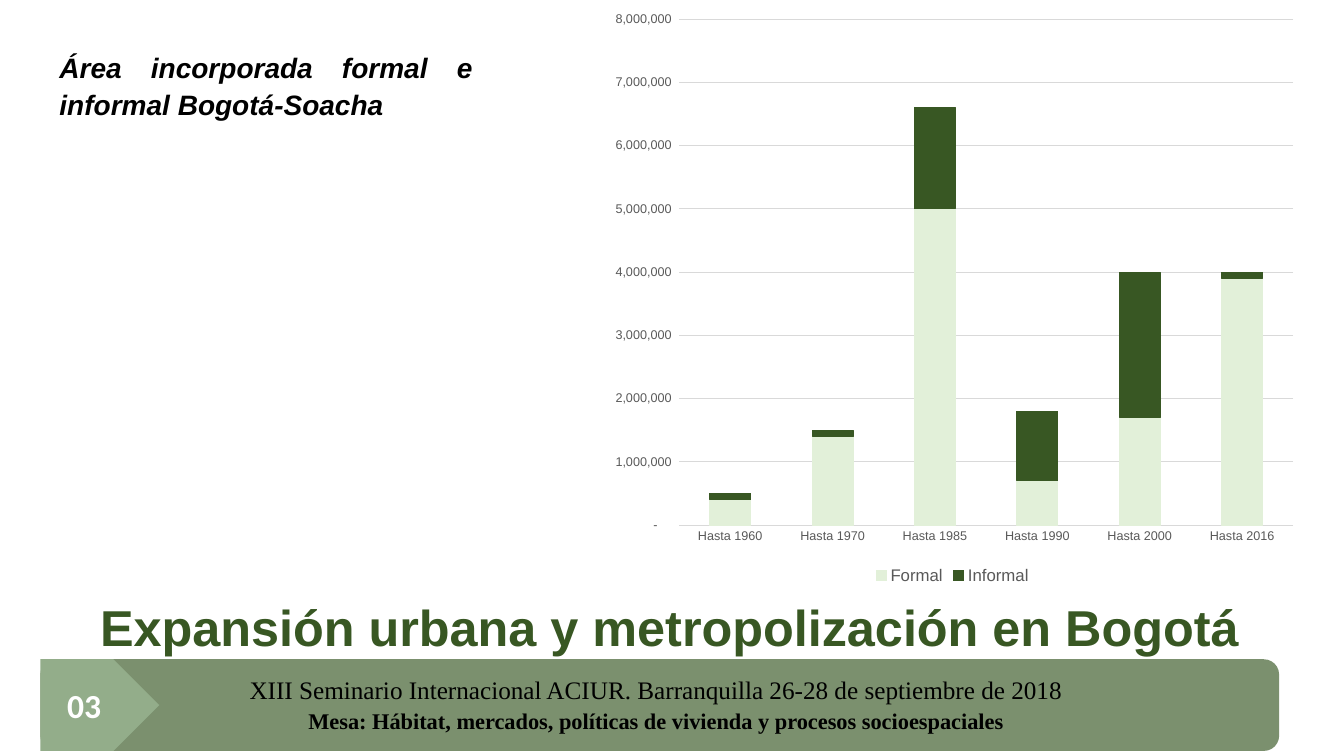
from pptx import Presentation
from pptx.chart.data import CategoryChartData
from pptx.dml.color import RGBColor
from pptx.enum.chart import XL_CHART_TYPE, XL_LEGEND_POSITION, XL_TICK_MARK
from pptx.enum.shapes import MSO_SHAPE
from pptx.enum.text import MSO_ANCHOR, MSO_AUTO_SIZE, PP_ALIGN
from pptx.oxml.ns import qn
from pptx.util import Pt
from lxml.etree import SubElement

DARK_GREEN = RGBColor(0x38, 0x57, 0x23)
PALE_GREEN = RGBColor(0xE2, 0xF0, 0xD9)
SAGE = RGBColor(0x93, 0xAD, 0x8A)
GREY_TEXT = RGBColor(0x59, 0x59, 0x59)
GREY_LINE = RGBColor(0xD9, 0xD9, 0xD9)
BLACK = RGBColor(0, 0, 0)
WHITE = RGBColor(0xFF, 0xFF, 0xFF)

NUMBER_FORMAT = r'_-* #,##0_-;\-* #,##0_-;_-* "-"??_-;_-@_'
PERIODS = [f"Hasta {year}" for year in (1960, 1970, 1985, 1990, 2000, 2016)]
AREAS = {
    "Formal": (PALE_GREEN, (400000, 1400000, 5000000, 700000, 1700000, 3900000)),
    "Informal": (DARK_GREEN, (100000, 100000, 1600000, 1100000, 2300000, 100000)),
}


def apply_format(target, values):
    for name, value in values.items():
        setattr(target, name, value)


def format_font(font, name, size, color, **styles):
    apply_format(font, {"name": name, "size": Pt(size), **styles})
    font.color.rgb = color


def place(shape, left, top, width, height):
    apply_format(shape, {"left": Pt(left), "top": Pt(top),
                         "width": Pt(width), "height": Pt(height)})


def add_span(para, text, name, size, color, **styles):
    span = para.add_run()
    span.text = text
    format_font(span.font, name, size, color, **styles)


def add_block(page, kind, at, color, opacity=100):
    block = page.shapes.add_shape(kind, *map(Pt, at))
    block.shadow.inherit = False
    block.fill.solid()
    block.fill.fore_color.rgb = color
    block.line.fill.background()
    if opacity < 100:
        fill_color = block.fill._xPr.find(qn("a:solidFill"))[0]
        SubElement(fill_color, qn("a:alpha"), val=str(opacity * 1000))


def add_box(page, at, anchor=MSO_ANCHOR.TOP):
    box = page.shapes.add_textbox(*map(Pt, at))
    apply_format(box.text_frame, {"word_wrap": True, "vertical_anchor": anchor,
                                  "auto_size": MSO_AUTO_SIZE.SHAPE_TO_FIT_TEXT})
    para = box.text_frame.paragraphs[0]
    para.alignment = PP_ALIGN.CENTER
    return box, para


def fill_placeholder(holder, at, anchor, para_format):
    place(holder, *at)
    apply_format(holder.text_frame, {"word_wrap": True, "vertical_anchor": anchor,
                                     "auto_size": MSO_AUTO_SIZE.NONE})
    para = holder.text_frame.paragraphs[0]
    apply_format(para, para_format)
    return para


def remove_bullet(para):
    properties = para._p.get_or_add_pPr()
    properties.set("marL", "0")
    properties.set("indent", "0")
    SubElement(properties, qn("a:buNone"))


def format_line(line, color):
    line.color.rgb = color
    line.width = Pt(0.75)


def format_axis(axis):
    apply_format(axis, {"major_tick_mark": XL_TICK_MARK.NONE,
                        "minor_tick_mark": XL_TICK_MARK.NONE})
    format_font(axis.tick_labels.font, "Arial", 9, GREY_TEXT)


def add_area_chart(page, at):
    data = CategoryChartData(number_format="#,##0")
    data.categories = PERIODS
    for name, (_, values) in AREAS.items():
        data.add_series(name, values)
    chart = page.shapes.add_chart(XL_CHART_TYPE.COLUMN_STACKED, *map(Pt, at), data).chart
    apply_format(chart, {"has_title": False, "has_legend": True})
    format_font(chart.font, "Calibri", 10, BLACK)

    # Columns
    plot = chart.plots[0]
    apply_format(plot, {"gap_width": 150, "overlap": 100, "vary_by_categories": False})
    for series, (color, _) in zip(plot.series, AREAS.values()):
        series.format.fill.solid()
        series.format.fill.fore_color.rgb = color
        format_line(series.format.line, color)

    # Axes
    format_axis(chart.category_axis)
    format_line(chart.category_axis.format.line, GREY_LINE)
    amounts = chart.value_axis
    format_axis(amounts)
    apply_format(amounts, {"minimum_scale": 0, "maximum_scale": 8000000,
                           "major_unit": 1000000, "has_major_gridlines": True})
    amounts.format.line.fill.background()
    format_line(amounts.major_gridlines.format.line, GREY_LINE)
    apply_format(amounts.tick_labels, {"number_format": NUMBER_FORMAT,
                                       "number_format_is_linked": False})

    # Legend
    apply_format(chart.legend, {"position": XL_LEGEND_POSITION.BOTTOM,
                                "include_in_layout": False})
    format_font(chart.legend.font, "Arial", 12, GREY_TEXT)


def main():
    deck = Presentation()
    apply_format(deck, {"slide_width": Pt(960), "slide_height": Pt(540)})
    page = deck.slides.add_slide(deck.slide_layouts[1])

    # Footer band with the event
    add_block(page, MSO_SHAPE.ROUNDED_RECTANGLE, (28.8, 470.9, 884.9, 65.5), DARK_GREEN, 66)
    box, para = add_box(page, (113.8, 478.1, 714.2, 51.1))
    add_span(para, "XIII Seminario Internacional ACIUR. Barranquilla 26-28 de septiembre de 2018 ",
             "Times New Roman", 18, BLACK)
    para = box.text_frame.add_paragraph()
    para.alignment = PP_ALIGN.CENTER
    add_span(para, "Mesa: Hábitat, mercados, políticas de vivienda y procesos socioespaciales",
             "Times New Roman", 16, BLACK, bold=True)
    add_span(para, " ", "Times New Roman", 18, BLACK)
    add_block(page, MSO_SHAPE.PENTAGON, (28.8, 470.9, 85, 65.5), SAGE)

    # Title and subject
    para = fill_placeholder(page.shapes.title, (41, 424.8, 861.8, 48.2), MSO_ANCHOR.BOTTOM,
                            {"alignment": PP_ALIGN.RIGHT, "line_spacing": 0.9})
    add_span(para, "Expansión urbana y metropolización en Bogotá ",
             "Arial", 36, DARK_GREEN, bold=True)
    para = fill_placeholder(page.placeholders[1], (35.3, 30.2, 309.6, 382.3), MSO_ANCHOR.TOP,
                            {"alignment": PP_ALIGN.JUSTIFY, "line_spacing": 1.1,
                             "space_before": Pt(8), "space_after": Pt(8)})
    remove_bullet(para)
    add_span(para, "Área incorporada formal e informal Bogotá-Soacha",
             "Arial", 20, BLACK, bold=True, italic=True)

    # Chart of incorporated area
    add_area_chart(page, (427, 0, 506.9, 420.5))

    # Section number
    _, para = add_box(page, (31, 485.3, 58.3, 36), MSO_ANCHOR.MIDDLE)
    add_span(para, "03", "Calibri", 24, WHITE, bold=True)

    deck.save("out.pptx")


if __name__ == "__main__":
    main()
